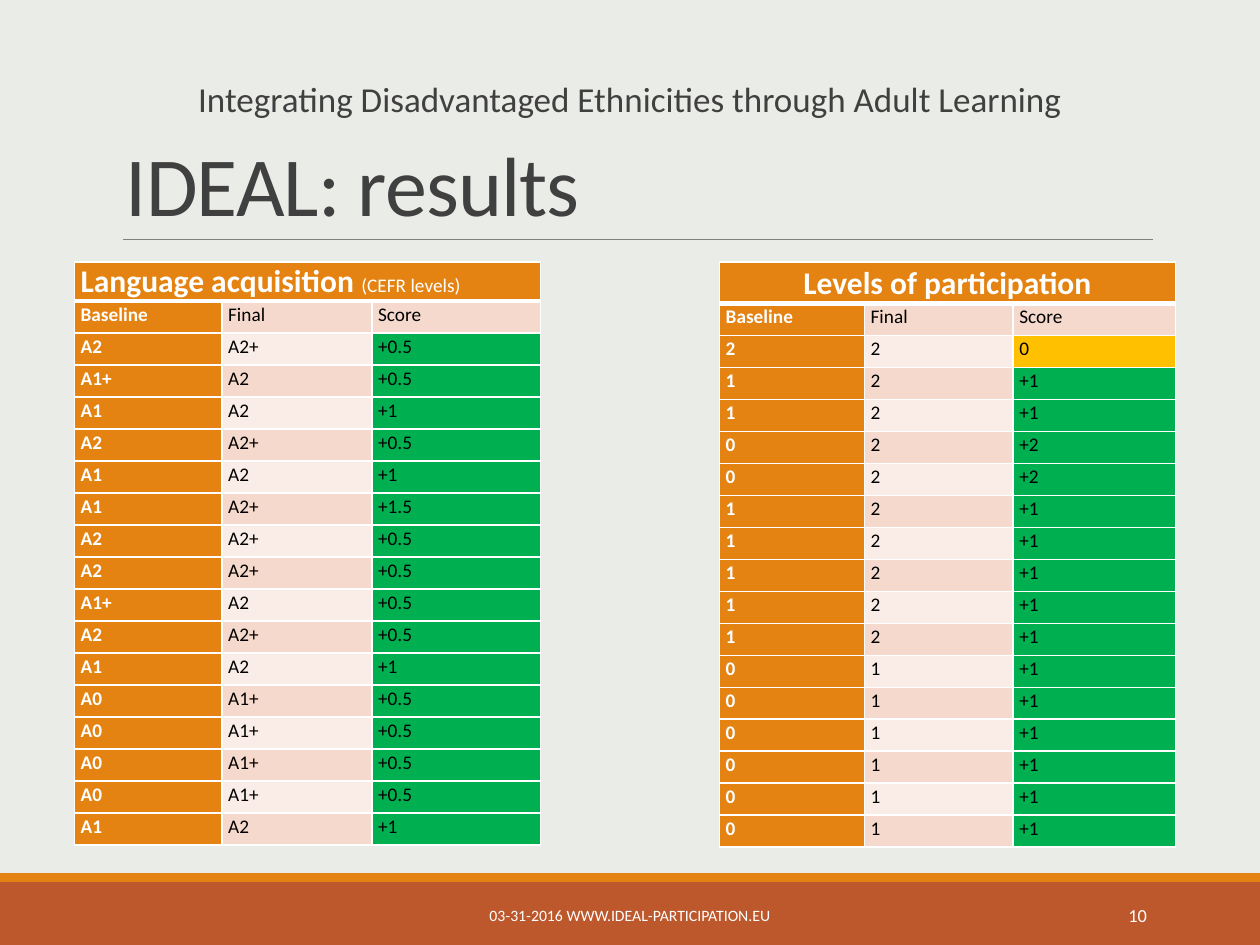
from lxml.etree import SubElement
from pptx import Presentation
from pptx.dml.color import RGBColor
from pptx.enum.shapes import MSO_CONNECTOR as Connector, MSO_SHAPE as Shape
from pptx.enum.text import MSO_ANCHOR as Anchor, PP_ALIGN as Align
from pptx.oxml.ns import qn
from pptx.util import Pt

BACKGROUND = RGBColor(0xEA, 0xEC, 0xE7)
RUST = RGBColor(0xBD, 0x58, 0x2C)
ORANGE = RGBColor(0xE4, 0x83, 0x12)
DARK_GRAY = RGBColor(0x40, 0x40, 0x40)
GRAY = RGBColor(0x80, 0x80, 0x80)
WHITE = RGBColor(0xFF, 0xFF, 0xFF)
BLACK = RGBColor(0x00, 0x00, 0x00)
PEACH = RGBColor(0xF5, 0xD9, 0xCC)
PALE_PEACH = RGBColor(0xFA, 0xED, 0xE7)
GREEN = RGBColor(0x00, 0xB0, 0x50)
AMBER = RGBColor(0xFF, 0xC0, 0x00)

FONT = "Calibri"
ROW_HEIGHT = 18.29
COLUMN_NAMES = ("Baseline", "Final", "Score")
CELL_MARGINS = {"margin_left": Pt(3.6), "margin_right": Pt(3.6),
                "margin_top": 0, "margin_bottom": 0}

LANGUAGE_RESULTS = [
    ("A2", "A2+", "+0.5"), ("A1+", "A2", "+0.5"), ("A1", "A2", "+1"), ("A2", "A2+", "+0.5"),
    ("A1", "A2", "+1"), ("A1", "A2+", "+1.5"), ("A2", "A2+", "+0.5"), ("A2", "A2+", "+0.5"),
    ("A1+", "A2", "+0.5"), ("A2", "A2+", "+0.5"), ("A1", "A2", "+1"),
    *[("A0", "A1+", "+0.5")] * 4, ("A1", "A2", "+1"),
]
PARTICIPATION_RESULTS = [
    ("2", "2", "0"), *[("1", "2", "+1")] * 2, *[("0", "2", "+2")] * 2,
    *[("1", "2", "+1")] * 5, *[("0", "1", "+1")] * 6,
]


def apply_format(target, values):
    for name, value in values.items():
        setattr(target, name, value)


def add_run(paragraph, text, size, color, bold=False):
    run = paragraph.add_run()
    run.text = text
    apply_format(run.font, {"name": FONT, "size": Pt(size), "bold": bold})
    run.font.color.rgb = color
    return run


def add_text(slide, box, text, size, color, frame_format, paragraph_format):
    frame = slide.shapes.add_textbox(*map(Pt, box)).text_frame
    apply_format(frame, {"word_wrap": True, **frame_format})
    paragraph = frame.paragraphs[0]
    apply_format(paragraph, paragraph_format)
    return add_run(paragraph, text, size, color)


def add_band(slide, box, color):
    band = slide.shapes.add_shape(Shape.RECTANGLE, *map(Pt, box))
    band.shadow.inherit = False
    band.fill.solid()
    band.fill.fore_color.rgb = color
    band.line.fill.background()


def add_rule(slide, left, right, top):
    rule = slide.shapes.add_connector(Connector.STRAIGHT, Pt(left), Pt(top), Pt(right), Pt(top))
    rule.line.width = Pt(0.5)
    rule.line.color.rgb = GRAY
    SubElement(rule._element.spPr, qn("a:effectLst"))


def style_cell(cell, color, top_width, bottom_width):
    apply_format(cell, {**CELL_MARGINS, "vertical_anchor": Anchor.TOP})
    properties = cell._tc.get_or_add_tcPr()
    widths = {"a:lnL": 1, "a:lnR": 1, "a:lnT": top_width, "a:lnB": bottom_width}
    for tag, width in widths.items():
        border = SubElement(properties, qn(tag), w=str(Pt(width)))
        fill = SubElement(border, qn("a:solidFill"))
        SubElement(fill, qn("a:srgbClr"), val=str(WHITE))
    cell.fill.solid()
    cell.fill.fore_color.rgb = color


def cell_color(row, column, text):
    if row == 0 or column == 0:
        return ORANGE
    if row > 1 and column == 2:
        return AMBER if text == "0" else GREEN
    return PEACH if row % 2 else PALE_PEACH


def add_results_table(slide, left, column_widths, header_height, title_runs, title_format, results):
    rows = [("", "", ""), COLUMN_NAMES, *results]
    height = header_height + ROW_HEIGHT * (len(rows) - 1)
    frame = slide.shapes.add_table(len(rows), len(column_widths), Pt(left), Pt(149.8),
                                   Pt(sum(column_widths)), Pt(height))
    table = frame.table
    for column, width in zip(table.columns, column_widths):
        column.width = Pt(width)
    for row_index, values in enumerate(rows):
        table.rows[row_index].height = Pt(ROW_HEIGHT if row_index else header_height)
        for column_index, text in enumerate(values):
            cell = table.cell(row_index, column_index)
            style_cell(cell, cell_color(row_index, column_index, text),
                       3 if row_index == 1 else 1, 1 if row_index else 3)
            if row_index:
                paragraph = cell.text_frame.paragraphs[0]
                paragraph.line_spacing = 1.07
                first = column_index == 0
                add_run(paragraph, text, 11, WHITE if first else BLACK, first)
    header = table.cell(0, 0)
    header.merge(table.cell(0, len(column_widths) - 1))
    paragraph = header.text_frame.paragraphs[0]
    apply_format(paragraph, title_format)
    for text, size, bold in title_runs:
        add_run(paragraph, text, size, WHITE, bold)


def main():
    presentation = Presentation()
    apply_format(presentation, {"slide_width": Pt(720), "slide_height": Pt(540)})
    slide = presentation.slides.add_slide(presentation.slide_layouts[6])
    slide.background.fill.solid()
    slide.background.fill.fore_color.rgb = BACKGROUND

    add_band(slide, (0, 504, 720, 36), RUST)
    add_band(slide, (0, 499, 720, 5), ORANGE)
    add_rule(slide, 70.5, 659, 136.8)

    title = add_text(slide, (64.8, 22.3, 594, 114.5), "IDEAL: results", 48, DARK_GRAY,
                     {"vertical_anchor": Anchor.BOTTOM}, {"line_spacing": 0.85})
    title.font._element.set("spc", "-50")
    add_text(slide, (36, 43.2, 648, 439.2),
             "Integrating Disadvantaged Ethnicities through Adult Learning", 20, DARK_GRAY,
             {"margin_left": 0, "margin_right": 0},
             {"alignment": Align.CENTER, "line_spacing": 0.9,
              "space_before": Pt(12), "space_after": Pt(2)})
    middle = {"vertical_anchor": Anchor.MIDDLE}
    add_text(slide, (217.4, 508.5, 285, 28.8), "03-31-2016 WWW.IDEAL-PARTICIPATION.EU",
             9, WHITE, middle, {"alignment": Align.CENTER})
    add_text(slide, (584.6, 508.5, 77.8, 28.8), "10", 10.5, WHITE, middle,
             {"alignment": Align.RIGHT})

    add_results_table(slide, 42.5, (84.3, 85.7, 96.4), 22.3,
                      [("Language acquisition ", 18, True), ("(CEFR levels)", 11, False)],
                      {}, LANGUAGE_RESULTS)
    add_results_table(slide, 411.1, (82.8, 85, 92.9), 23.5,
                      [("Levels of participation", 18, True)],
                      {"alignment": Align.CENTER, "line_spacing": 1.07}, PARTICIPATION_RESULTS)
    presentation.save("out.pptx")


if __name__ == "__main__":
    main()
